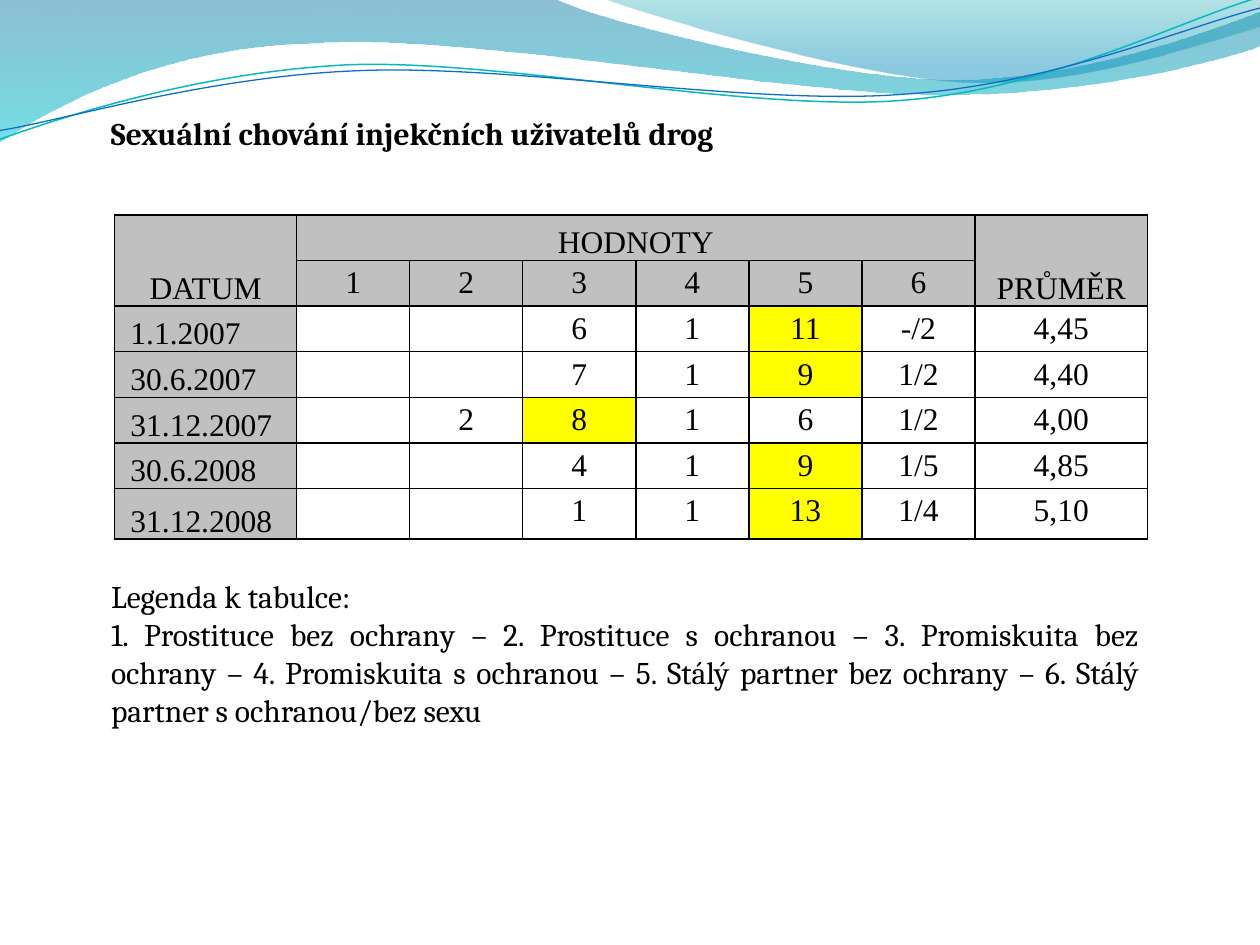
from lxml import etree
from pptx import Presentation
from pptx.dml.color import RGBColor
from pptx.enum.text import MSO_ANCHOR, MSO_AUTO_SIZE, PP_ALIGN
from pptx.oxml import parse_xml
from pptx.oxml.ns import nsdecls, qn
from pptx.util import Cm, Pt

LEFT, CENTER, JUSTIFY = PP_ALIGN.LEFT, PP_ALIGN.CENTER, PP_ALIGN.JUSTIFY
TOP, MIDDLE, BOTTOM = MSO_ANCHOR.TOP, MSO_ANCHOR.MIDDLE, MSO_ANCHOR.BOTTOM
NO_AUTOFIT = MSO_AUTO_SIZE.NONE

BLACK = RGBColor(0x00, 0x00, 0x00)
GRAY = RGBColor(0xC0, 0xC0, 0xC0)
YELLOW = RGBColor(0xFF, 0xFF, 0x00)
DEEP_BLUE = RGBColor(0x00, 0x74, 0xA1)
CYAN = RGBColor(0x00, 0xC6, 0xCF)
TEAL = RGBColor(0x00, 0xA1, 0xA9)
SKY = RGBColor(0x00, 0x8B, 0xBF)
TEAL_LINE = RGBColor(0x0A, 0xB8, 0xBF)
BLUE_LINE = RGBColor(0x0F, 0x6F, 0xC6)

WAVE_UNIT = Cm(2.54)
LINE_TILT = 357.3

# Each wave is a start point followed by line ends (2 numbers) and Bézier curves (6).
BAND = [(0, 0), (4.4, -0.01),
        (4.76, 0.17, 6.64, 0.63, 7.58, 0.63), (8.53, 0.63, 9.58, 0.26, 10, 0.09),
        (10.01, 0.36),
        (9.83, 0.44, 8.7, 0.76, 7.46, 0.75), (6.22, 0.75, 3.82, 0.28, 2.57, 0.34),
        (1.29, 0.36, 0.46, 0.83, -0.01, 1.13)]
CREST = [(4.79, -0.01),
         (5.09, 0.11, 6.82, 0.62, 7.69, 0.65), (8.56, 0.69, 9.61, 0.32, 10, 0.21),
         (10, 0)]
# The line waves are given level, before they are tilted.
TEAL_WAVE = [(-0.02, 0.87),
             (0.47, 0.72, 1.58, 0.41, 2.77, 0.41), (3.96, 0.42, 5.91, 0.93, 7.12, 0.9),
             (8.32, 0.87, 9.4, 0.36, 10, 0.22)]
BLUE_WAVE = [(-0.02, 0.8),
             (0.46, 0.75, 1.64, 0.45, 2.83, 0.46), (4.03, 0.46, 5.96, 0.89, 7.16, 0.85),
             (8.35, 0.83, 9.42, 0.42, 10.02, 0.3)]

COL_WIDTHS = [3.67] + [2.28] * 6 + [3.48]
ROW_HEIGHTS = [0.92] * 6 + [1.02]
HEADER = [["DATUM", "HODNOTY", "", "", "", "", "", "PRŮMĚR"],
          ["", "1", "2", "3", "4", "5", "6", ""]]
RECORDS = [["1.1.2007", "", "", "6", "1", "11", "-/2", "4,45"],
           ["30.6.2007", "", "", "7", "1", "9", "1/2", "4,40"],
           ["31.12.2007", "", "2", "8", "1", "6", "1/2", "4,00"],
           ["30.6.2008", "", "", "4", "1", "9", "1/5", "4,85"],
           ["31.12.2008", "", "", "1", "1", "13", "1/4", "5,10"]]
LEGEND = ("Legenda k tabulce:\n"
          "1. Prostituce bez ochrany – 2. Prostituce s ochranou – 3. Promiskuita bez "
          "ochrany – 4. Promiskuita s ochranou – 5. Stálý partner bez ochrany – "
          "6. Stálý partner s ochranou/bez sexu")


def write(tf, text, font="Cambria", size=18, bold=False, align=LEFT, spacing=1.0):
    tf.text = text
    for p in tf.paragraphs:
        p.alignment = align
        p.line_spacing = spacing
        for r in p.runs:
            f = r.font
            f.name, f.size, f.bold = font, Pt(size), bold
            f.color.rgb = BLACK


def add_wave(shapes, left, top, wave, closed):
    """Draw the wave with straight sides, then bend those that are Bézier curves."""
    def place(x, y):
        return left + round(x * WAVE_UNIT), top + round(y * WAVE_UNIT)

    builder = shapes.build_freeform(*place(*wave[0]))
    builder.add_line_segments([place(*step[-2:]) for step in wave[1:]], close=closed)
    sp = builder.convert_to_shape()
    sp.shadow.inherit = False
    for side, step in zip(list(sp._element.spPr.iter(qn("a:lnTo"))), wave[1:]):
        if len(step) == 6:
            side.tag = qn("a:cubicBezTo")
            for i, control in enumerate((step[:2], step[2:4])):
                x, y = place(*control)
                pt = etree.Element(qn("a:pt"), x=str(x - sp.left), y=str(y - sp.top))
                side.insert(i, pt)
    return sp


def add_header_waves(slide, left, top):
    for wave, stops in ((BAND, [(0, DEEP_BLUE, 45), (1, CYAN, 55)]),
                        (CREST, [(0, TEAL, 30), (0.8, SKY, 45)])):
        sp = add_wave(slide.shapes, left, top, wave, True)
        sp.line.fill.background()
        sp.fill.gradient()
        sp.fill.gradient_angle = 270
        for stop, (position, color, _) in zip(sp.fill.gradient_stops, stops):
            stop.position = position
            stop.color.rgb = color
        for clr, (_, _, opacity) in zip(sp._element.spPr.iter(qn("a:srgbClr")), stops):
            etree.SubElement(clr, qn("a:alpha")).set("val", str(opacity * 1000))
    group = slide.shapes.add_group_shape()
    for wave, color, width in ((TEAL_WAVE, TEAL_LINE, 0.85), (BLUE_WAVE, BLUE_LINE, 0.75)):
        sp = add_wave(group.shapes, left, top, wave, False)
        sp.rotation = LINE_TILT
        sp.fill.background()
        sp.line.color.rgb = color
        sp.line.width = Pt(width)


def add_title(slide, left, top, width, height):
    sp = slide.shapes.title
    sp.left, sp.top, sp.width, sp.height = left, top, width, height
    tf = sp.text_frame
    tf.vertical_anchor, tf.auto_size = TOP, NO_AUTOFIT
    write(tf, "Sexuální chování injekčních uživatelů drog", bold=True)


def format_cell(cell, text, fill, align, anchor, indent):
    cell.margin_left = Cm(indent)
    cell.margin_right = cell.margin_top = cell.margin_bottom = 0
    cell.vertical_anchor = anchor
    if text:
        write(cell.text_frame, text, font="Times New Roman", align=align, spacing=1.15)
    tcPr = cell._tc.get_or_add_tcPr()
    for side in ("lnL", "lnR", "lnT", "lnB"):
        tcPr.append(parse_xml(
            f'<a:{side} {nsdecls("a")} w="{Pt(1)}"><a:solidFill>'
            f'<a:srgbClr val="{BLACK}"/></a:solidFill></a:{side}>'))
    if fill is None:
        cell.fill.background()
    else:
        cell.fill.solid()
        cell.fill.fore_color.rgb = fill


def add_behaviour_table(slide, left, top):
    rows = HEADER + RECORDS
    frame = slide.shapes.add_table(len(rows), len(COL_WIDTHS), left, top,
                                   Cm(sum(COL_WIDTHS)), Cm(sum(ROW_HEIGHTS)))
    table = frame.table
    table.first_row = table.horz_banding = False
    for column, width in zip(table.columns, COL_WIDTHS):
        column.width = Cm(width)
    for row, height in zip(table.rows, ROW_HEIGHTS):
        row.height = Cm(height)
    for r, row in enumerate(rows):
        in_header = r < len(HEADER)
        highest = max((int(value) for value in row[1:6] if value.isdigit()), default=0)
        for c, text in enumerate(row):
            is_date = c == 0 and not in_header
            fill = GRAY if in_header or c == 0 else None
            if not in_header and 0 < c < 6 and text == str(highest):
                fill = YELLOW
            format_cell(table.cell(r, c), text, fill,
                        align=LEFT if is_date else CENTER,
                        anchor=BOTTOM if r == 0 or is_date else TOP,
                        indent=0.32 if is_date else 0)
    for first, last in (((0, 0), (1, 0)), ((0, 1), (0, 6)), ((0, 7), (1, 7))):
        table.cell(*first).merge(table.cell(*last))


def add_legend(slide, left, top, width, height):
    tf = slide.shapes.add_textbox(left, top, width, height).text_frame
    tf.word_wrap = True
    tf.vertical_anchor = MIDDLE
    write(tf, LEGEND, align=JUSTIFY)


def main():
    prs = Presentation()
    prs.slide_width, prs.slide_height = Cm(25.4), Cm(19.05)
    slide = prs.slides.add_slide(prs.slide_layouts[5])
    add_header_waves(slide, 0, 0)
    add_behaviour_table(slide, Cm(2.31), Cm(4.33))
    add_title(slide, Cm(1.98), Cm(2.18), Cm(21.03), Cm(1.02))
    add_legend(slide, Cm(1.99), Cm(11.5), Cm(21.23), Cm(3.33))
    prs.save("out.pptx")


if __name__ == "__main__":
    main()
